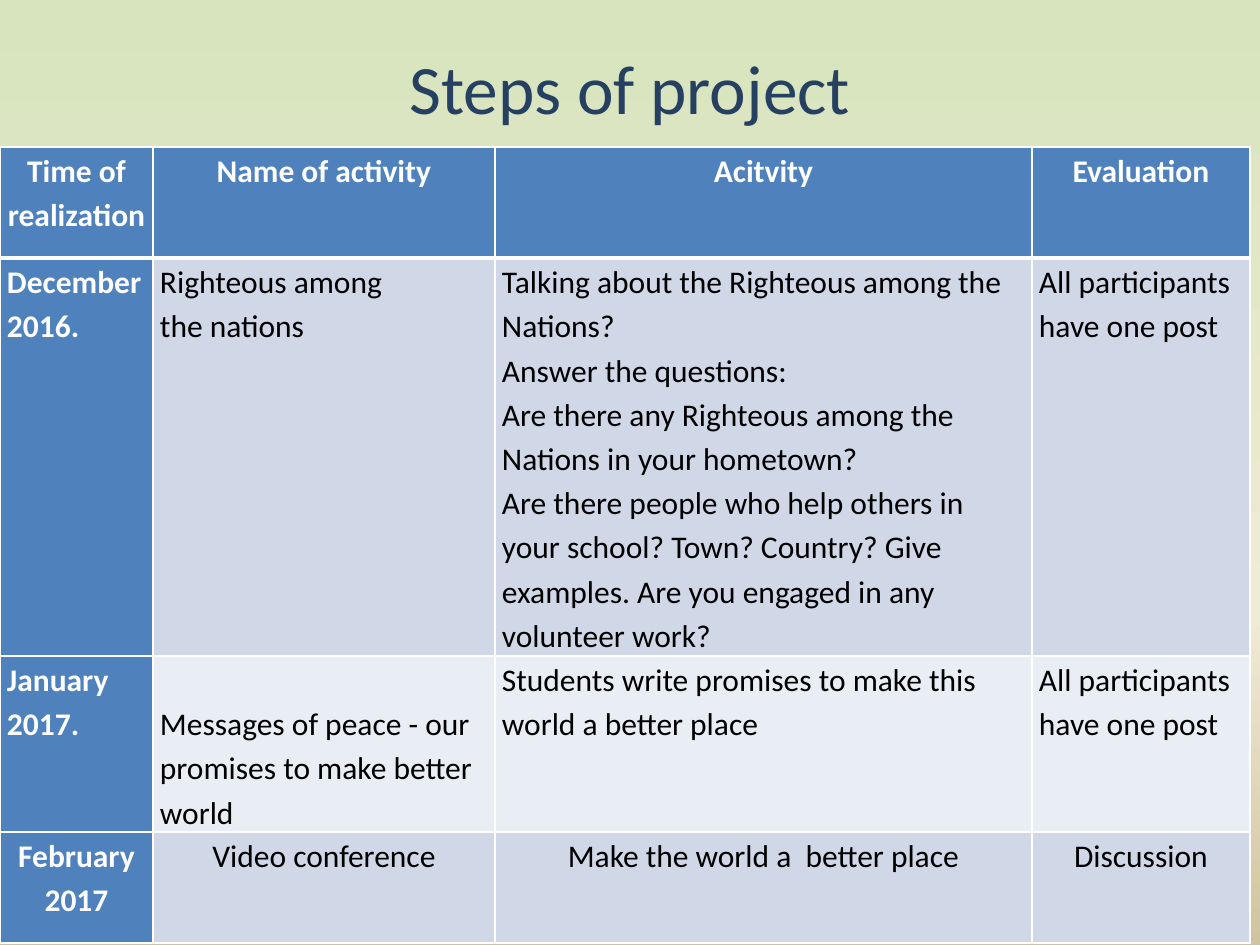
from dataclasses import dataclass

from lxml.etree import SubElement
from pptx import Presentation
from pptx.dml.color import RGBColor
from pptx.enum.text import MSO_ANCHOR as Anchor, PP_ALIGN as Align
from pptx.oxml import parse_xml
from pptx.oxml.ns import nsdecls, qn
from pptx.util import Emu, Pt

SCALE = 914400 / 126


def px(n: int) -> Emu:
    return Emu(round(n * SCALE))


@dataclass(frozen=True)
class Theme:
    font: str = "Calibri"
    title_size: float = 39.6
    body_size: float = 18
    title: str = "254061"
    head: str = "4F81BD"
    bands: tuple = ("D0D8E8", "E9EDF4")
    light: str = "FEFEFE"
    dark: str = "000000"
    backdrop: tuple = ((0, "D7E4BD"), (65, "F0EBD5"), (100, "D1C39F"))


@dataclass(frozen=True)
class Row:
    height: int
    texts: tuple
    align: Align = Align.LEFT


THEME = Theme()
COLUMNS = (153, 342, 537, 218)
PADDING = 7
LINE = 44  # height of one line of body text
LOWERED = (2, 1)  # cell whose text starts one line down
ROWS = (
    Row(111, ("Time of realization", "Name of activity", "Acitvity", "Evaluation"), Align.CENTER),
    Row(398, (
        "December 2016.",
        "Righteous among\nthe nations",
        "Talking about the Righteous among the Nations?\n"
        "Answer the questions:\n"
        "Are there any Righteous among the Nations in your hometown?\n"
        "Are there people who help others in your school? Town? Country? "
        "Give examples. Are you engaged in any volunteer work?",
        "All participants have one post",
    )),
    Row(176, (
        "January 2017.",
        "Messages of peace - our promises to make better world",
        "Students write promises to make this world a better place",
        "All participants have one post",
    )),
    Row(111, ("February 2017", "Video conference", "Make the world a  better place", "Discussion"),
        Align.CENTER),
)


def write(tf, text: str, *, size: float, color: str, bold: bool = False,
          align: Align = Align.LEFT, spacing: float = 1.0) -> None:
    for i, line in enumerate(text.split("\n")):
        p = tf.add_paragraph() if i else tf.paragraphs[0]
        p.alignment, p.line_spacing = align, spacing
        r = p.add_run()
        r.text = line
        r.font.name, r.font.size, r.font.bold = THEME.font, Pt(size), bold
        r.font.color.rgb = RGBColor.from_string(color)


def paint_background(slide) -> None:
    fill = slide.background.fill
    fill.gradient()
    fill.gradient_angle = 270  # counter-clockwise, so top to bottom
    stops = "".join(f'<a:gs pos="{pos * 1000}"><a:srgbClr val="{color}"/></a:gs>'
                    for pos, color in THEME.backdrop)
    old = next(slide.background._cSld.iter(qn("a:gsLst")))
    old.getparent().replace(old, parse_xml(f'<a:gsLst {nsdecls("a")}>{stops}</a:gsLst>'))


def set_border(cell, side: str, width: float) -> None:
    ln = SubElement(cell._tc.get_or_add_tcPr(), qn(f"a:ln{side}"), w=str(Pt(width)))
    SubElement(SubElement(ln, qn("a:solidFill")), qn("a:srgbClr"), val=THEME.light)


def fill_cell(cell, row: Row, i: int, j: int) -> None:
    is_head = i == 0 or j == 0
    cell.margin_left = cell.margin_right = px(PADDING)
    cell.margin_top = px(LINE if (i, j) == LOWERED else 0)
    cell.margin_bottom = 0
    # Borders come before the fill; a heavy rule sits under the header
    for side in "LRTB":
        heavy = (i, side) in ((0, "B"), (1, "T"))
        set_border(cell, side, 3 if heavy else 1)
    cell.fill.solid()
    cell.fill.fore_color.rgb = RGBColor.from_string(
        THEME.head if is_head else THEME.bands[(i - 1) % 2])
    write(cell.text_frame, row.texts[j], size=THEME.body_size, bold=is_head,
          color=THEME.light if is_head else THEME.dark, align=row.align, spacing=1.15)


def add_title(slide, text: str) -> None:
    tf = slide.shapes.add_textbox(px(63), px(38), px(1134), px(98)).text_frame
    tf.word_wrap, tf.vertical_anchor = True, Anchor.MIDDLE
    write(tf, text, size=THEME.title_size, color=THEME.title, align=Align.CENTER)


def add_steps(slide) -> None:
    table = slide.shapes.add_table(
        len(ROWS), len(COLUMNS), 0, px(147),
        px(sum(COLUMNS)), px(sum(row.height for row in ROWS))).table
    table.first_row = table.horz_banding = False
    for column, width in zip(table.columns, COLUMNS):
        column.width = px(width)
    for i, row in enumerate(ROWS):
        table.rows[i].height = px(row.height)
        for j in range(len(COLUMNS)):
            fill_cell(table.cell(i, j), row, i, j)


def main() -> None:
    prs = Presentation()
    prs.slide_width, prs.slide_height = px(1260), px(945)
    slide = prs.slides.add_slide(prs.slide_layouts[6])
    paint_background(slide)
    add_title(slide, "Steps of project")
    add_steps(slide)
    prs.save("out.pptx")


if __name__ == "__main__":
    main()
